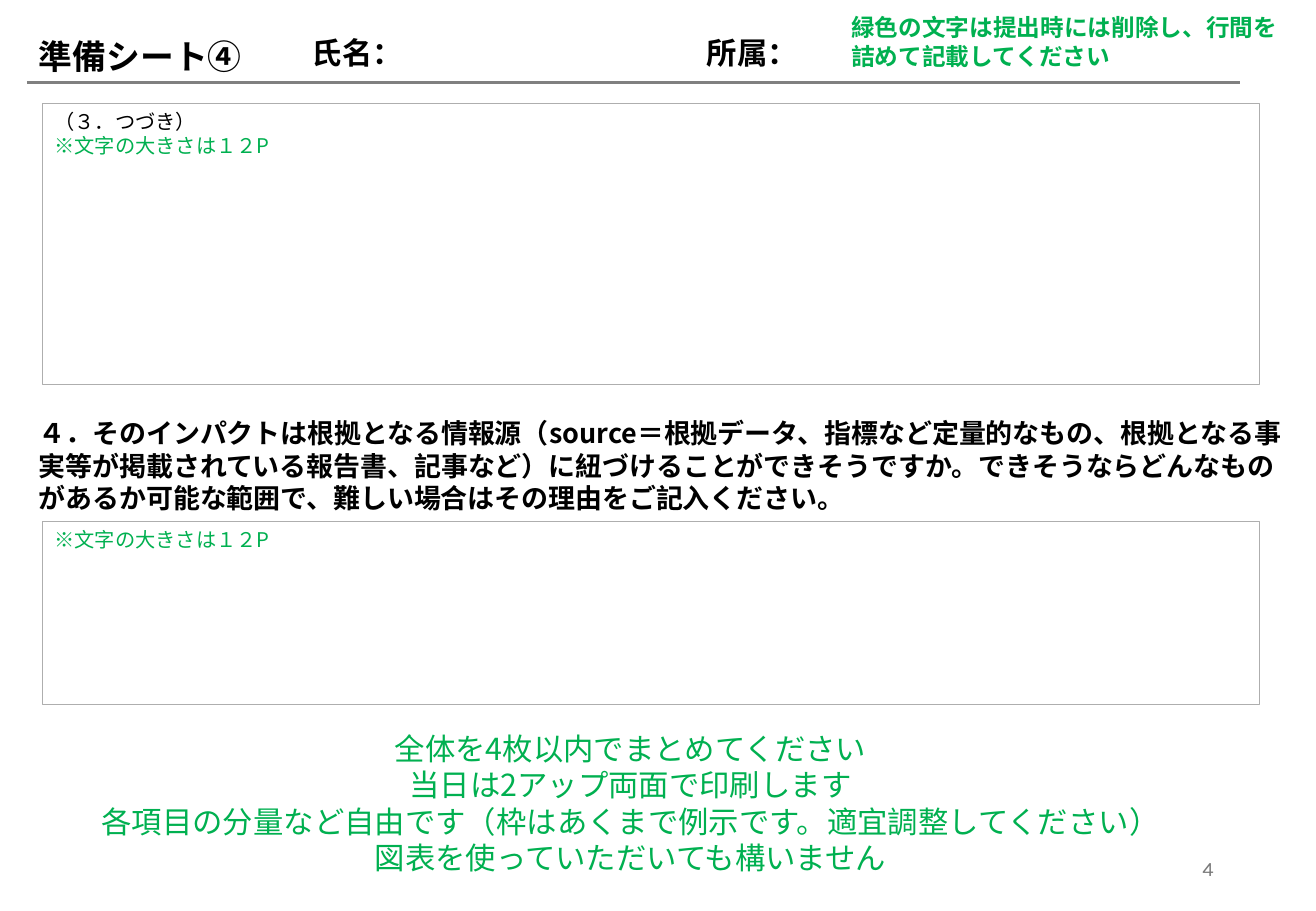
from lxml import etree
from pptx import Presentation
from pptx.dml.color import RGBColor
from pptx.enum import shapes, text
from pptx.oxml import ns
from pptx.util import Cm, Pt

BLACK = RGBColor(0x00, 0x00, 0x00)
GREEN = RGBColor(0x00, 0xB0, 0x50)
NUMBER_GRAY = RGBColor(0x79, 0x79, 0x79)
RULE_GRAY = RGBColor(0x80, 0x80, 0x80)
FRAME_GRAY = RGBColor(0xAE, 0xAE, 0xAE)
JAPANESE_FONT = "Noto Sans CJK JP"
LATIN_FONT = "Karla"
LEFT, CENTER, RIGHT = text.PP_ALIGN.LEFT, text.PP_ALIGN.CENTER, text.PP_ALIGN.RIGHT

TITLE = "準備シート④"
TITLE_BOX = (0.56, 0.61, 4.78, 1.12)
FIELDS = [("氏名：", 6.27), ("所属：", 14.53)]
FIELD_TOP, FIELD_WIDTH, FIELD_HEIGHT = 0.58, 2.6, 1.02
RULE = (0.56, 1.73, 25.93, 1.73)
NOTICE = ["緑色の文字は提出時には削除し、行間を", "詰めて記載してください"]
NOTICE_BOX = (17.55, 0.15, 9.5, 1.45)
QUESTION = (
    "４．そのインパクトは根拠となる情報源（source＝根拠データ、指標など定量的なもの、"
    "根拠となる事実等が掲載されている報告書、記事など）に紐づけることができそうですか。"
    "できそうならどんなものがあるか可能な範囲で、難しい場合はその理由をご記入ください。"
)
QUESTION_BOX = (0.56, 8.59, 26.62, 2.31)
SIZE_HINT = "※文字の大きさは１２P"
FRAME_LEFT, FRAME_WIDTH = 0.89, 25.45
FRAMES = [
    (2.16, 5.89, [("（３．つづき）", BLACK), (SIZE_HINT, GREEN)]),
    (10.9, 3.84, [(SIZE_HINT, GREEN)]),
]
CLOSING = [
    "全体を4枚以内でまとめてください",
    "当日は2アップ両面で印刷します",
    "各項目の分量など自由です（枠はあくまで例示です。適宜調整してください）",
    "図表を使っていただいても構いません",
]
CLOSING_BOX = (0.89, 15.14, 24.59, 3.33)
NUMBER_BOX = (19.43, 17.65, 6.2, 1.02)


def write(shape, lines, size, color, bold=False, align=LEFT, font=JAPANESE_FONT,
          wrap=True, anchor=text.MSO_ANCHOR.TOP):
    frame = shape.text_frame
    frame.text = "\n".join(lines)
    frame.word_wrap = wrap
    frame.auto_size = text.MSO_AUTO_SIZE.NONE
    frame.vertical_anchor = anchor
    for paragraph in frame.paragraphs:
        paragraph.alignment = align
        for run in paragraph.runs:
            run.font.size = Pt(size)
            run.font.bold = bold
            run.font.color.rgb = color
            run.font.name = font
            east_asian = etree.SubElement(run.font._element, ns.qn("a:ea"))
            east_asian.set("typeface", JAPANESE_FONT)


def add_text(slide, box, lines, size, color, **style):
    shape = slide.shapes.add_textbox(*map(Cm, box))
    write(shape, lines, size, color, **style)


def add_frame(slide, top, height, lines):
    box = (FRAME_LEFT, top, FRAME_WIDTH, height)
    shape = slide.shapes.add_shape(shapes.MSO_SHAPE.RECTANGLE, *map(Cm, box))
    shape.shadow.inherit = False
    shape.fill.background()
    shape.line.color.rgb = FRAME_GRAY
    shape.line.width = Pt(0.75)
    write(shape, [line for line, color in lines], 12, BLACK)
    for paragraph, (line, color) in zip(shape.text_frame.paragraphs, lines):
        paragraph.runs[0].font.color.rgb = color


def add_rule(slide):
    rule = slide.shapes.add_connector(shapes.MSO_CONNECTOR.STRAIGHT, *map(Cm, RULE))
    rule.line.color.rgb = RULE_GRAY
    rule.line.width = Pt(1.5)
    etree.SubElement(rule._element.spPr, ns.qn("a:effectLst"))


def main():
    presentation = Presentation()
    presentation.slide_width = Cm(27.52)
    presentation.slide_height = Cm(19.05)
    slide = presentation.slides.add_slide(presentation.slide_layouts[5])

    title = slide.shapes.title
    title.left, title.top, title.width, title.height = map(Cm, TITLE_BOX)
    write(title, [TITLE], 20, BLACK, bold=True, wrap=False)

    for label, left in FIELDS:
        box = (left, FIELD_TOP, FIELD_WIDTH, FIELD_HEIGHT)
        add_text(slide, box, [label], 18, BLACK, bold=True, font=LATIN_FONT, wrap=False)
    add_rule(slide)
    add_text(slide, NOTICE_BOX, NOTICE, 14, GREEN, bold=True, wrap=False)
    add_text(slide, QUESTION_BOX, [QUESTION], 16, BLACK, bold=True)
    for top, height, lines in FRAMES:
        add_frame(slide, top, height, lines)
    add_text(slide, CLOSING_BOX, CLOSING, 18, GREEN, align=CENTER)
    add_text(slide, NUMBER_BOX, ["4"], 12, NUMBER_GRAY, align=RIGHT, font=LATIN_FONT,
             anchor=text.MSO_ANCHOR.MIDDLE)
    presentation.save("out.pptx")


if __name__ == "__main__":
    main()
